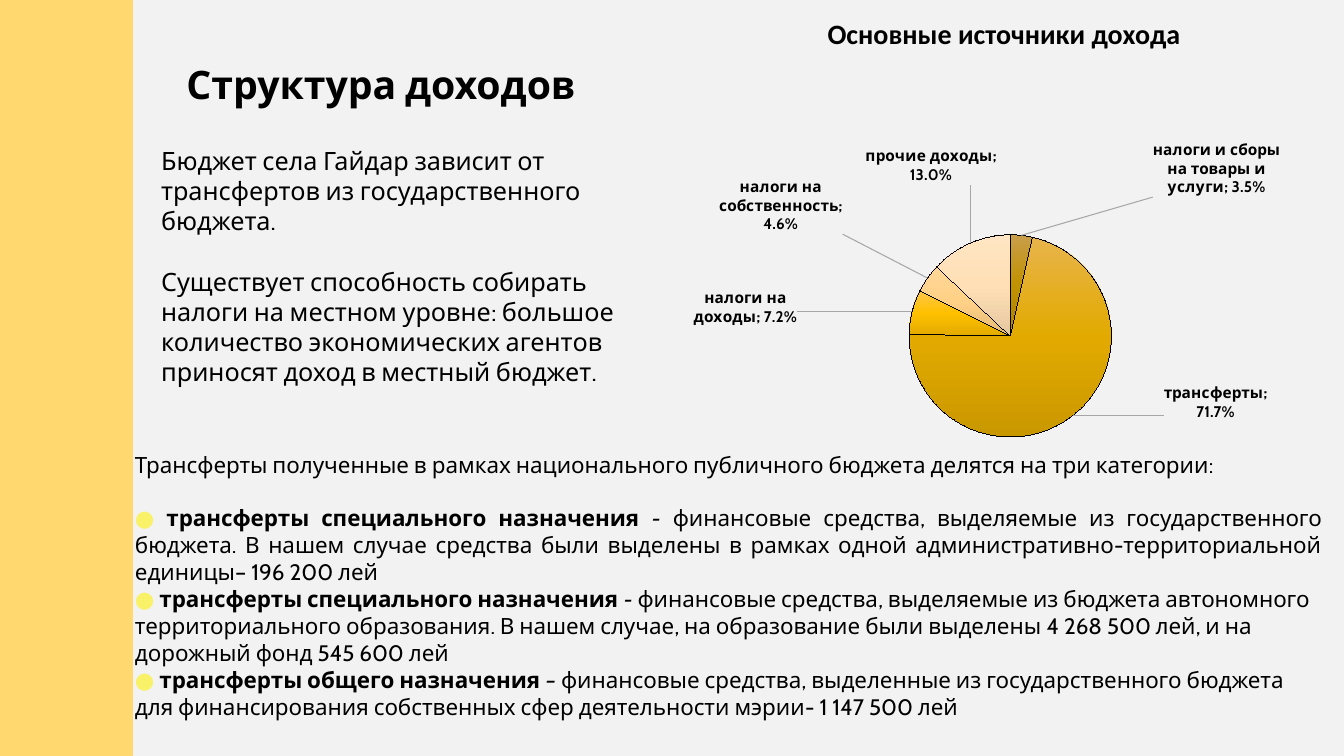
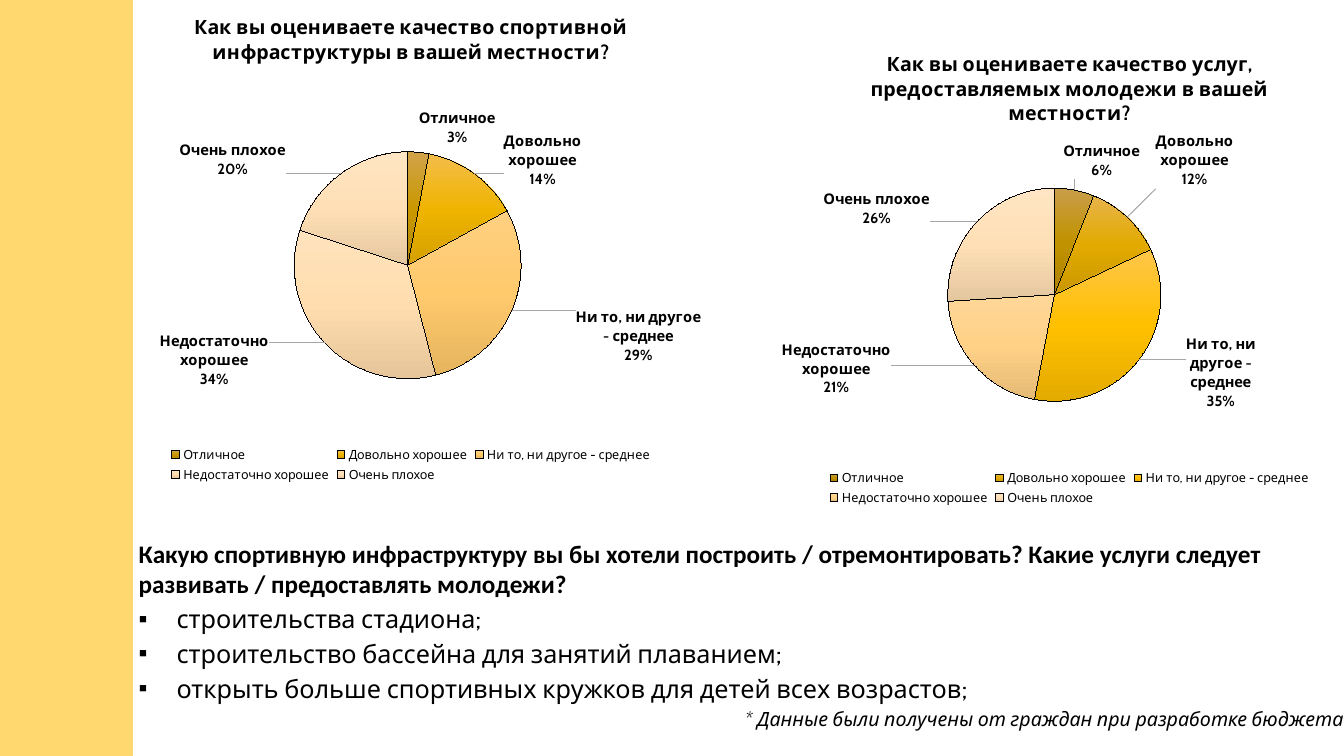
"""Build two slides on village budget income and a survey of residents."""
from dataclasses import dataclass

from pptx import Presentation
from pptx import util as u
from pptx.chart import data as cd
from pptx.dml import color
from pptx.enum import chart as ch
from pptx.enum import shapes, text
from pptx.oxml import parse_xml
from pptx.oxml import ns

Pt = u.Pt


@dataclass(frozen=True)
class Theme:
    """Colours, fonts and type sizes."""
    band: str = "FFD96F"
    ink: str = "000000"
    dot: str = "F9F168"
    white: str = "FFFFFF"
    grey: str = "F2F2F2"
    leader: str = "A6A6A6"
    body: str = "Cabin"
    head: str = "Calibri"
    title: float = 28
    caption: float = 20
    text: float = 18
    detail: float = 16
    note: float = 14
    label: float = 10.5
    legend: float = 9
    gold: tuple = ("C99E4B C19200 AC8100", "E8B44B E2AA00 C99700", "FFC64B FFC000 E3AB00",
                   "FFD798 FFD187 E5BA75", "FFE5C3 FFE0B6 E5C79F")
    amber: tuple = ("D1A34B C99800 B38700", "F4BD4B EFB400 D4A000", "FFD082 FFCA6C E5B45E",
                    "FFE3BD FFDDAF E5C599", "FFE5C3 FFE0B6 E5C79F")


def xml(tag, body):
    """Parse one element with the drawing and chart namespaces declared."""
    return parse_xml(f'<{tag} {ns.nsdecls("a", "c")}>{body}</{tag}>')


def manual_layout(x, y, w=None, h=None):
    """Return a chart layout, either an inner plot area or a label offset."""
    size = "" if w is None else f'<c:w val="{w}"/><c:h val="{h}"/>'
    mode = "" if w is None else ('<c:layoutTarget val="inner"/><c:xMode val="edge"/>'
                                 '<c:yMode val="edge"/>')
    return f'<c:manualLayout>{mode}<c:x val="{x}"/><c:y val="{y}"/>{size}</c:manualLayout>'


class Deck:
    """Holds the style and the current slide."""

    def __init__(self, theme):
        self.t = theme
        self.prs = Presentation()
        self.prs.slide_width, self.prs.slide_height = Pt(960), Pt(540)
        self.s = None

    def slide(self, background, title=None):
        """Start a slide, with a placed title if one is given."""
        first = self.s is None
        self.s = self.prs.slides.add_slide(self.prs.slide_layouts[6 if title is None else 5])
        fill = self.s.background.fill
        fill.solid()
        fill.fore_color.rgb = color.RGBColor.from_string(background)
        if first:
            self.master_band()
        if title is not None:
            sp = self.s.shapes.title
            sp.left, sp.top, sp.width, sp.height = Pt(126), Pt(39.6), Pt(762), Pt(41)
            tf = sp.text_frame
            tf.text = title
            tf.vertical_anchor = text.MSO_ANCHOR.TOP
            p = tf.paragraphs[0]
            p.alignment = text.PP_ALIGN.LEFT
            self.font(p.runs[0].font, self.t.title, bold=True)

    def master_band(self):
        """Put the left band on the slide master."""
        sp = self.s.shapes.add_shape(shapes.MSO_SHAPE.RECTANGLE, 0, 0, Pt(95), Pt(540))
        sp.shadow.inherit = False
        sp.fill.solid()
        sp.fill.fore_color.rgb = color.RGBColor.from_string(self.t.band)
        sp.line.fill.background()
        sp.element.nvSpPr.cNvPr.set("id", "100")
        self.prs.slide_master.shapes.element.insert(2, sp.element)

    def font(self, font, size, name=None, bold=False, italic=False, rgb=None):
        """Format one font."""
        font.size, font.name = Pt(size), name or self.t.body
        font.bold, font.italic = bold, italic
        font.color.rgb = color.RGBColor.from_string(rgb or self.t.ink)

    def text(self, box, lines, size, gap=0, **style):
        """Add a text box and return its text frame."""
        tf = self.s.shapes.add_textbox(*map(Pt, box)).text_frame
        tf.word_wrap = True
        tf.text = "\n".join(lines)
        for i, p in enumerate(tf.paragraphs):
            if i:
                p.space_before = Pt(gap)
            self.font(p.runs[0].font, size, **style)
        return tf

    def term(self, tf, name, dash, meaning, size, justify=False, gap=0):
        """Add a dotted paragraph that explains a term."""
        p = tf.add_paragraph()
        p.space_before = Pt(gap)
        if justify:
            p.alignment = text.PP_ALIGN.JUSTIFY
        parts = (("● ", dict(bold=True, italic=True, rgb=self.t.dot)), (name + " ", dict(bold=True)),
                 (dash + " ", dict(italic=True)), (meaning, {}))
        for words, style in parts:
            r = p.add_run()
            r.text = words
            self.font(r.font, size, **style)

    def bullet(self, tf, words, size):
        """Add a square-bulleted paragraph."""
        p = tf.add_paragraph()
        p.text = words
        p.alignment, p.line_spacing = text.PP_ALIGN.JUSTIFY, 1.15
        pPr = p._p.get_or_add_pPr()
        pPr.set("marL", str(Pt(27)))
        pPr.set("indent", str(-Pt(27)))
        for tag, key, value in (("a:buFont", "typeface", "Arial"), ("a:buChar", "char", "▪")):
            bu = xml(tag, "")
            bu.set(key, value)
            pPr.append(bu)
        self.font(p.runs[0].font, size)

    def pie(self, box, cats, vals, colours, plot, offsets, fmt, title=None, percent=True, size=None):
        """Add a pie chart with placed labels and optional title and legend."""
        data = cd.CategoryChartData()
        data.categories = cats
        data.add_series("Series 1", vals)
        chart = self.s.shapes.add_chart(ch.XL_CHART_TYPE.PIE, *map(Pt, box), data).chart
        self.font(chart.font, 10, self.t.head)
        chart.has_title = chart.has_legend = title is not None
        if title is not None:
            tf = chart.chart_title.text_frame
            tf.text = title
            self.font(tf.paragraphs[0].runs[0].font, self.t.note, bold=True)
            chart.legend.position = ch.XL_LEGEND_POSITION.BOTTOM
            chart.legend.include_in_layout = False
            self.font(chart.legend.font, self.t.legend)
        pie = chart.plots[0]
        pie.vary_by_categories = True
        self.slices(chart, pie.series[0], colours)
        self.labels(chart, pie.series[0], offsets, fmt, percent, size or self.t.label)
        area = chart.element.xpath(".//c:plotArea")[0]
        for old in area.xpath("./c:layout"):
            area.remove(old)
        area.insert(0, xml("c:layout", manual_layout(*plot)))

    def slices(self, chart, series, colours):
        """Give each slice a hairline and a vertical gradient."""
        for i, shades in enumerate(colours):
            line = series.points[i].format.line
            line.color.rgb = color.RGBColor.from_string(self.t.ink)
            stops = "".join(f'<a:gs pos="{n * 50000}"><a:srgbClr val="{c}"/></a:gs>'
                            for n, c in enumerate(shades.split()))
            spPr = chart.element.xpath(f'.//c:dPt[c:idx/@val="{i}"]/c:spPr')[0]
            spPr.insert(0, xml("a:gradFill", f'<a:gsLst>{stops}</a:gsLst><a:lin ang="5400000"/>'))

    def labels(self, chart, series, offsets, fmt, percent, size):
        """Show category and value, each label moved by its offset."""
        dl = series.data_labels
        dl.show_category_name, dl.show_percentage, dl.show_value = True, percent, not percent
        dl.number_format, dl.number_format_is_linked = fmt, False
        self.font(dl.font, size, bold=True)
        separator = "\n" if percent else "; "
        dLbls = chart.element.xpath(".//c:ser/c:dLbls")[0]
        for i, offset in enumerate(offsets):
            dLbls.insert(i, xml("c:dLbl", (
                f'<c:idx val="{i}"/><c:layout>{manual_layout(*offset)}</c:layout>'
                f'<c:numFmt formatCode="{fmt}" sourceLinked="0"/>'
                '<c:dLblPos val="outEnd"/><c:showLegendKey val="0"/>'
                f'<c:showVal val="{int(not percent)}"/><c:showCatName val="1"/>'
                f'<c:showSerName val="0"/><c:showPercent val="{int(percent)}"/>'
                f'<c:showBubbleSize val="0"/><c:separator>{separator}</c:separator>')))
        dLbls.append(xml("c:leaderLines", (
            f'<c:spPr><a:ln w="{Pt(0.75)}"><a:solidFill><a:srgbClr val="{self.t.leader}"/>'
            '</a:solidFill></a:ln></c:spPr>')))


def income(d):
    """Build the slide on income structure."""
    t = d.t
    d.slide(t.grey, "Структура доходов")
    d.text((108, 100, 362, 181), [
        "Бюджет села Гайдар зависит от трансфертов из государственного бюджета.",
        "Существует способность собирать налоги на местном уровне: большое количество "
        "экономических агентов приносят доход в местный бюджет."], t.text, gap=21.6)
    d.text((584, 8, 336, 32), ["Основные источники дохода"], t.caption, name=t.head, bold=True)
    tf = d.text((89.3, 318.5, 862.5, 201), [
        "Трансферты полученные в рамках национального публичного бюджета делятся на три "
        "категории:"], t.detail)
    d.term(tf, "трансферты специального назначения", "-",
           "финансовые средства, выделяемые из государственного бюджета. В нашем случае средства "
           "были выделены в рамках одной административно-территориальной единицы– 196 200 лей",
           t.detail, justify=True, gap=19.2)
    d.term(tf, "трансферты специального назначения", "-",
           "финансовые средства, выделяемые из бюджета автономного территориального образования. "
           "В нашем случае, на образование были выделены 4 268 500 лей, и на дорожный фонд "
           "545 600 лей", t.detail)
    d.term(tf, "трансферты общего назначения", "–",
           "финансовые средства, выделенные из государственного бюджета для финансирования "
           "собственных сфер деятельности мэрии- 1 147 500 лей", t.detail)
    d.pie((441.4, 55, 519, 289),
          ["налоги и сборы на товары и услуги", "трансферты", "налоги на доходы",
           "налоги на собственность", "прочие доходы"],
          [0.035, 0.717, 0.072, 0.046, 0.13], t.gold, (0.36, 0.39, 0.36, 0.5),
          [(0.18, -0.08), (0.12, -0.09), (-0.15, 0.04), (-0.11, -0.1), (0.04, -0.13)],
          "0.0%", percent=False, size=11)


def survey(d):
    """Build the slide on the residents' survey."""
    t = d.t
    d.slide(t.white)
    tf = d.text((92, 381, 851, 148), [
        "Какую спортивную инфраструктуру вы бы хотели построить / отремонтировать? "
        "Какие услуги следует развивать / предоставлять молодежи?"],
        t.text, name=t.head, bold=True)
    for wish in ("строительства стадиона;", "строительство бассейна для занятий плаванием;",
                 "открыть больше спортивных кружков для детей всех возрастов;"):
        d.bullet(tf, wish, t.text)
    d.text((525, 501.5, 457, 24), ["* Данные были получены от граждан при разработке бюджета"],
           t.note, italic=True)
    grades = ["Отличное", "Довольно хорошее", "Ни то, ни другое - среднее",
              "Недостаточно хорошее", "Очень плохое"]
    d.pie((62, -3.6, 463, 351), grades, [3, 14, 29, 34, 20], t.amber,
          (0.32, 0.25, 0.35, 0.6),
          [(0, 0), (0.04, 0.04), (0.09, -0.01), (-0.08, -0.03), (-0.08, 0.02)], "0%",
          "Как вы оцениваете качество спортивной инфраструктуры в вашей местности?")
    d.pie((546.5, 23, 435, 341), grades, [6, 12, 35, 21, 26], t.gold,
          (0.3, 0.26, 0.35, 0.58),
          [(-0.02, -0.01), (0.04, -0.05), (0.07, -0.06), (-0.13, -0.06), (-0.07, 0.02)], "0%",
          "Как вы оцениваете качество услуг, предоставляемых молодежи в вашей местности?")


def main():
    """Build and save the deck."""
    d = Deck(Theme())
    income(d)
    survey(d)
    d.prs.save("out.pptx")


if __name__ == "__main__":
    main()
